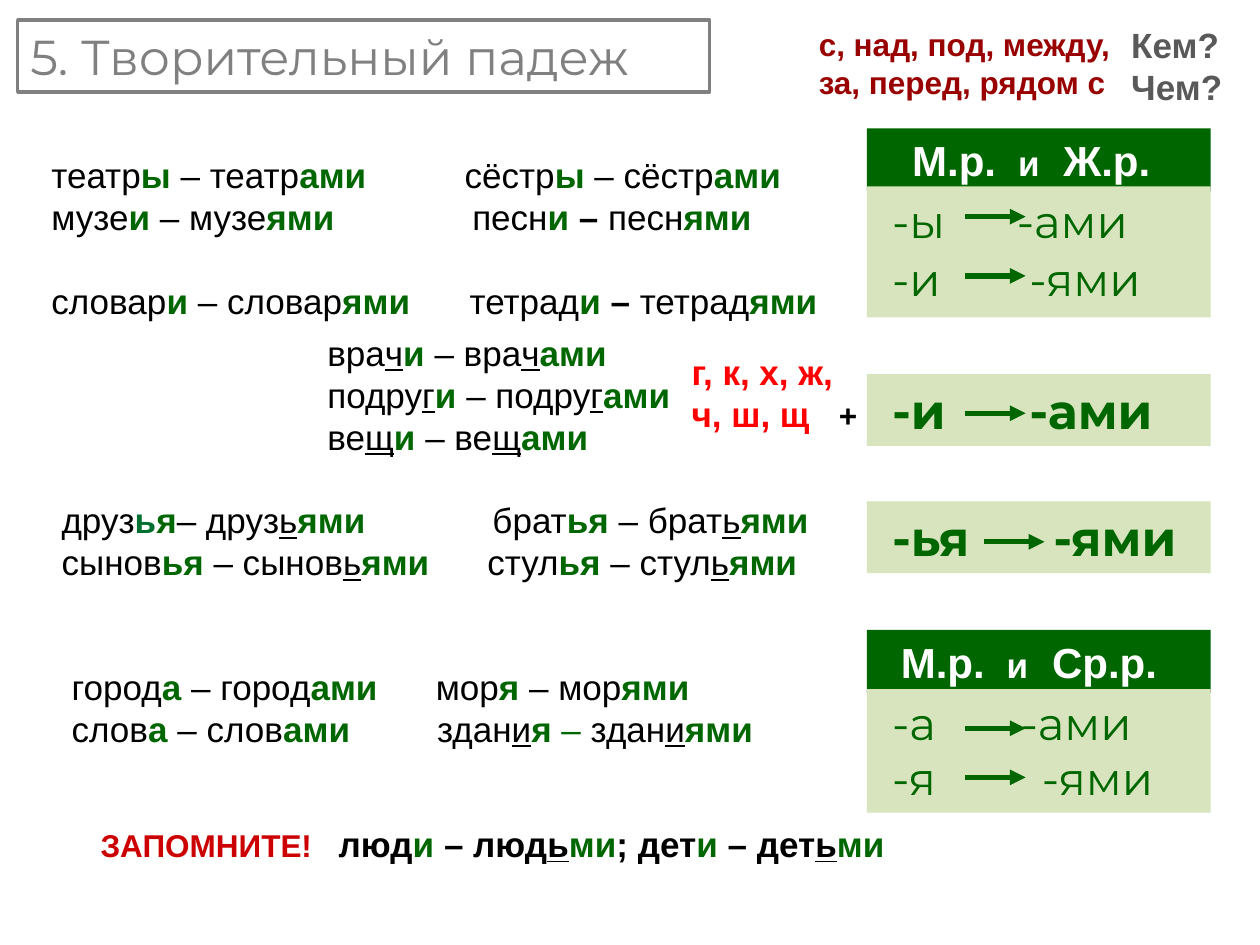
from dataclasses import dataclass

import pptx
import pptx.dml.color
import pptx.enum.shapes
import pptx.enum.text
import pptx.oxml
import pptx.oxml.ns
import pptx.util
from pptx.util import Inches, Pt

COLORS = {
    "white": "FFFFFF", "black": "000000", "green": "006600", "pine": "007030",
    "pale": "D7E4BD", "gray": "808080", "dark gray": "595959",
    "maroon": "990000", "crimson": "CC0000", "red": "FF0000",
}

# Each mark switches its format on, and off again at its next use.
MARKS = {
    "*": {"bold": True, "color": "green"},
    "@": {"bold": True, "color": "pine"},
    "^": {"color": "green"},
    "#": {"bold": True},
    "_": {"underline": True},
    "%": {"size": Pt(20)},
    "$": {"size": Pt(18), "color": "black"},
    "&": {"size": Pt(18), "color": "crimson"},
}

PLAIN = {"name": "Arial", "size": Pt(20), "color": "black"}
BOLD = PLAIN | {"bold": True}
TITLE = {"name": "Montserrat", "size": Pt(28), "color": "gray", "bold": False}
HEADER = BOLD | {"size": Pt(24), "color": "white"}
ENDING = {"name": "Montserrat", "size": Pt(26), "color": "green"}
BIG_ENDING = ENDING | {"size": Pt(28), "bold": True}

PANEL_LEFT, PANEL_WIDTH = 6.88, 2.73
ARROW_LENGTH = 0.48


@dataclass
class Line:
    text: str
    tabs: tuple[float, ...] = ()
    before: float = 0


@dataclass
class TextBlock:
    left: float
    top: float
    width: float
    height: float
    style: dict
    lines: list[Line]
    wrap: bool = True


@dataclass
class Panel:
    top: float
    height: float
    style: dict
    lines: list[Line]
    arrow_heights: tuple[float, ...]
    arrow_left: float = 7.66
    header: str = ""
    header_top: float = 0
    header_inset: float = 0


BLOCKS = [
    TextBlock(6.4, 0.15, 2.66, 0.71, BOLD | {"size": Pt(18), "color": "maroon"}, [
        Line("с, над, под, между,"), Line("за, перед, рядом с")]),
    TextBlock(8.88, 0.14, 0.93, 0.77, BOLD | {"color": "dark gray"}, [
        Line("Кем?"), Line("Чем?")], wrap=False),
    TextBlock(5.39, 2.73, 1.72, 0.77, BOLD | {"color": "red"}, [
        Line("г, к, х, ж,"), Line("ч, ш, щ\t$+$", (1.17,))]),
    TextBlock(2.5, 2.58, 2.94, 1.11, PLAIN, [
        Line("вра_ч_*и* – вра_ч_*ами*"),
        Line("подру_г_*и* – подру_г_*ами*"),
        Line("ве_щ_*и* – ве_щ_*ами*")], wrap=False),
    TextBlock(0.7, 6.48, 6.8, 0.44, BOLD, [
        Line("&ЗАПОМНИТЕ!&\tлюд^и^ – люд_ь_^ми^; дет^и^ – дет_ь_^ми^", (1.89,))]),
    TextBlock(0.31, 1.17, 6.56, 1.44, PLAIN, [
        Line("театр*ы* – театр*ами*\tсёстр*ы* – сёстр*ами*", (3.28,)),
        Line("музе*и* – музе*ями*\tпесн*и* #–# песн*ями*", (3.34,)),
        Line("словар*и* – словар*ями*\tтетрад*и* #–# тетрад*ями*", (3.32,), 24)]),
    TextBlock(0.39, 3.91, 6.15, 0.77, PLAIN, [
        Line("друз@ь@*я*– друз_ь_*ями*\tбрат*ья* – брат_ь_*ями*", (3.42,)),
        Line("сынов*ья* – сынов_ь_*ями*\tстул*ья* – стул_ь_*ями*", (3.38,))]),
    TextBlock(0.47, 5.23, 5.78, 0.77, PLAIN, [
        Line("город*а* – город*ами*\tмор*я* – мор*ями*", (2.89,)),
        Line("слов*а* – слов*ами*\tздан_и_*я* ^–^ здан_и_*ями*", (2.9,))]),
]

PANELS = [
    Panel(1.48, 1.04, ENDING, [Line("-ы\t-ами", (0.99,)), Line("-и\t-ями", (1.09,), 2)],
          (1.72, 2.19), header="М.р.\t%и%\tЖ.р.", header_top=1.02, header_inset=0.36),
    Panel(5.47, 0.98, ENDING, [Line("-а\t-ами", (1.02,)), Line("-я\t-ями", (1.19,))],
          (5.78, 6.17), header="М.р.\t%и%\tСр.р.", header_top=5, header_inset=0.27),
    Panel(2.97, 0.57, BIG_ENDING, [Line("-и\t-ами", (1.09,))], (3.28,)),
    Panel(3.98, 0.57, BIG_ENDING, [Line("-ья\t-ями", (1.28,))], (4.3,), arrow_left=7.81),
]


def rgb(name: str) -> pptx.dml.color.RGBColor:
    return pptx.dml.color.RGBColor.from_string(COLORS[name])


def split_marks(text: str) -> list[tuple[str, dict]]:
    """Cut marked text into pieces, each with the formats in force there."""
    pieces, active, piece = [], [], ""
    for letter in text:
        if letter not in MARKS:
            piece += letter
            continue
        pieces.append((piece, [*active]))
        piece = ""
        if letter in active:
            active.remove(letter)
        else:
            active.append(letter)
    pieces.append((piece, active))
    return [(piece, {key: value for mark in marks for key, value in MARKS[mark].items()})
            for piece, marks in pieces if piece]


def write_lines(frame, lines: list[Line], style: dict) -> None:
    for index, line in enumerate(lines):
        para = frame.add_paragraph() if index else frame.paragraphs[0]
        para.alignment = pptx.enum.text.PP_ALIGN.LEFT
        para.space_before = Pt(line.before)
        if line.tabs:
            properties = para._p.get_or_add_pPr()
            stops = pptx.oxml.parse_xml(f"<a:tabLst {pptx.oxml.ns.nsdecls('a')}/>")
            for position in line.tabs:
                stop = stops.makeelement(pptx.oxml.ns.qn("a:tab"),
                                         {"pos": str(Inches(position)), "algn": "l"})
                stops.append(stop)
            properties.append(stops)
        for text, changes in split_marks(line.text):
            span = para.add_run()
            span.text = text
            for name, value in (style | changes).items():
                if name == "color":
                    span.font.color.rgb = rgb(value)
                else:
                    setattr(span.font, name, value)


def draw_title(page, text: str) -> None:
    title = page.shapes.title
    place = {"left": 0.14, "top": 0.16, "width": 5.49, "height": 0.57}
    for name, value in place.items():
        setattr(title, name, Inches(value))
    title.fill.solid()
    title.fill.fore_color.rgb = rgb("white")
    title.line.color.rgb = rgb("gray")
    title.line.width = Pt(2)
    title.text_frame.word_wrap = False
    title.text_frame.auto_size = pptx.enum.text.MSO_AUTO_SIZE.NONE
    write_lines(title.text_frame, [Line(text)], TITLE)


def draw_block(page, block: TextBlock) -> None:
    box = page.shapes.add_textbox(Inches(block.left), Inches(block.top),
                                  Inches(block.width), Inches(block.height))
    box.text_frame.word_wrap = block.wrap
    write_lines(box.text_frame, block.lines, block.style)


def draw_band(shapes, top: float, height: float, fill: str, inset: float):
    """Draw one filled rectangle of a panel and return its text frame."""
    band = shapes.add_shape(pptx.enum.shapes.MSO_SHAPE.RECTANGLE, Inches(PANEL_LEFT),
                            Inches(top), Inches(PANEL_WIDTH), Inches(height))
    band.shadow.inherit = False
    band.fill.solid()
    band.fill.fore_color.rgb = rgb(fill)
    band.line.fill.background()
    band.text_frame.margin_left = Inches(inset)
    return band.text_frame


def draw_arrow(shapes, left: float, height: float) -> None:
    arrow = shapes.add_connector(pptx.enum.shapes.MSO_CONNECTOR.STRAIGHT, Inches(left),
                                 Inches(height), Inches(left + ARROW_LENGTH), Inches(height))
    arrow.line.color.rgb = rgb("green")
    arrow.line.width = Pt(3)
    namespace = pptx.oxml.ns.nsdecls("a")
    arrow.line._get_or_add_ln().append(
        pptx.oxml.parse_xml(f'<a:tailEnd {namespace} type="triangle"/>'))
    arrow._element.spPr.append(pptx.oxml.parse_xml(f"<a:effectLst {namespace}/>"))


def draw_panel(page, panel: Panel) -> None:
    shapes = page.shapes.add_group_shape().shapes
    if panel.header:
        frame = draw_band(shapes, panel.header_top, 0.5, "green", panel.header_inset)
        frame.vertical_anchor = pptx.enum.text.MSO_ANCHOR.MIDDLE
        write_lines(frame, [Line(panel.header, (0.84, 1.2))], HEADER)
    frame = draw_band(shapes, panel.top, panel.height, "pale", 0.2)
    frame.vertical_anchor = pptx.enum.text.MSO_ANCHOR.TOP
    write_lines(frame, panel.lines, panel.style)
    for height in panel.arrow_heights:
        draw_arrow(shapes, panel.arrow_left, height)


def main() -> None:
    deck = pptx.Presentation()
    deck.slide_width, deck.slide_height = Inches(10), Inches(7.5)
    page = deck.slides.add_slide(deck.slide_layouts.get_by_name("Title Only"))
    draw_title(page, "5. Творительный падеж")
    for panel in PANELS:
        draw_panel(page, panel)
    for block in BLOCKS:
        draw_block(page, block)
    deck.save("out.pptx")


if __name__ == "__main__":
    main()
